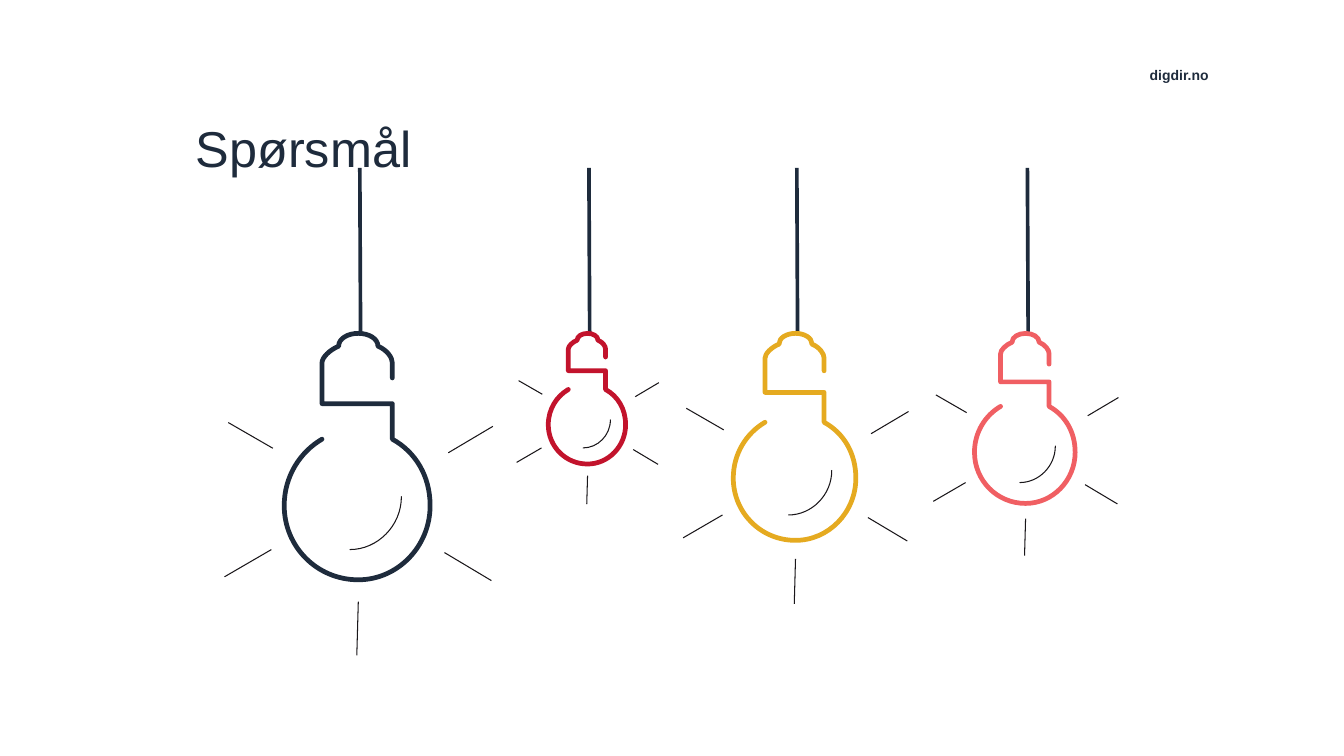
from lxml.etree import SubElement
from pptx import Presentation
from pptx.dml.color import RGBColor
from pptx.enum.shapes import MSO_CONNECTOR
from pptx.enum.text import MSO_ANCHOR
from pptx.oxml.ns import qn
from pptx.util import Pt

NAVY = RGBColor(0x1E, 0x2B, 0x3C)
RED = RGBColor(0xC2, 0x13, 0x2C)
YELLOW = RGBColor(0xE5, 0xAA, 0x20)
CORAL = RGBColor(0xF0, 0x5F, 0x63)
BLACK = RGBColor(0x1A, 0x17, 0x1A)

UNIT = 0.72  # points per drawing unit of the largest bulb
CORD_TOP, CORD_BOTTOM, BULB_TOP = 159.8, 316.1, 317.5

# Outlines: a start point, then segments that are a line end (one point)
# or a Bézier curve (two control points and an end).
BULB = [
    (50, 140),
    [(21, 157), (0, 189), (0, 228)],
    [(0, 282), (43, 326), (98, 326)],
    [(150, 326), (193, 282), (193, 228)],
    [(193, 189), (174, 157), (143, 140)],
    [(143, 93)],
    [(50, 93)],
    [(50, 39)],
    [(50, 32), (60, 22), (72, 17)],
    [(72, 7), (84, 0), (98, 0)],
    [(112, 0), (124, 7), (124, 17)],
    [(136, 22), (143, 32), (143, 39)],
    [(143, 59)],
]
GLINT = [(155, 216), [(155, 255), (123, 286), (87, 286)]]
RAYS = [
    (98, 355, 96, 426),
    (212, 290, 274, 327),
    (217, 158, 276, 123),
    (-15, 152, -74, 118),
    (-17, 286, -79, 322),
]

# Bulb left, cord x, size, colour
LAMPS = [
    (270.7, 342.7, 1, NAVY),
    (522.2, 560.9, 0.53, RED),
    (698.4, 758.9, 0.84, YELLOW),
    (928.1, 978.5, 0.69, CORAL),
]

prs = Presentation()
prs.slide_width, prs.slide_height = Pt(1280), Pt(720)
s = prs.slides.add_slide(prs.slide_layouts[6])


def add_line(x1, y1, x2, y2, color, width):
    line = s.shapes.add_connector(MSO_CONNECTOR.STRAIGHT, Pt(x1), Pt(y1), Pt(x2), Pt(y2))
    line.line.color.rgb = color
    line.line.width = Pt(width)
    SubElement(line._element.spPr, qn("a:effectLst"))


def add_outline(outline, left, size, color, width):
    """Draw an open outline, turning three-point segments into Bézier curves."""
    start, *segments = outline
    ends = [segment[-1] for segment in segments]
    builder = s.shapes.build_freeform(*start, scale=Pt(UNIT) * size)
    builder.add_line_segments(ends, close=False)
    sp = builder.convert_to_shape(Pt(left), Pt(BULB_TOP))
    sp.shadow.inherit = False
    sp.fill.background()
    sp.line.color.rgb = color
    sp.line.width = Pt(width)
    ln = sp.line._get_or_add_ln()
    ln.set("cap", "rnd")
    SubElement(ln, qn("a:round"))

    min_x = min(x for x, y in [start, *ends])
    min_y = min(y for x, y in [start, *ends])
    for node, segment in zip(list(sp._element.iter(qn("a:lnTo"))), segments):
        if len(segment) == 3:
            curve = SubElement(node.getparent(), qn("a:cubicBezTo"))
            for x, y in segment:
                SubElement(curve, qn("a:pt"), x=str(x - min_x), y=str(y - min_y))
            node.getparent().replace(node, curve)


# Site name and title
for text, box, size, bold in [
    ("digdir.no", (1087.9, 59, 81.4, 23.8), 13.3, True),
    ("Spørsmål", (186.5, 116.6, 968.4, 54.7), 48, False),
]:
    tf = s.shapes.add_textbox(*map(Pt, box)).text_frame
    tf.vertical_anchor = MSO_ANCHOR.MIDDLE
    p = tf.paragraphs[0]
    p.text = text
    p.font.name = "Arial"
    p.font.size = Pt(size)
    p.font.bold = bold
    p.font.color.rgb = NAVY

# The title, last in the list, fills its box without insets
tf.word_wrap = True
tf.margin_left = tf.margin_top = tf.margin_right = tf.margin_bottom = 0
p.line_spacing = 0.9

# Cords
for left, cord_x, size, color in LAMPS:
    add_line(cord_x, CORD_TOP, cord_x + 0.7, CORD_BOTTOM, NAVY, 3.5)

# Bulbs with glint and rays
for left, cord_x, size, color in LAMPS:
    add_outline(BULB, left, size, color, 4.5)
    add_outline(GLINT, left, size, BLACK, 1)
    k = UNIT * size
    for x1, y1, x2, y2 in RAYS:
        add_line(left + k * x1, BULB_TOP + k * y1, left + k * x2, BULB_TOP + k * y2, BLACK, 1)

prs.save("out.pptx")
